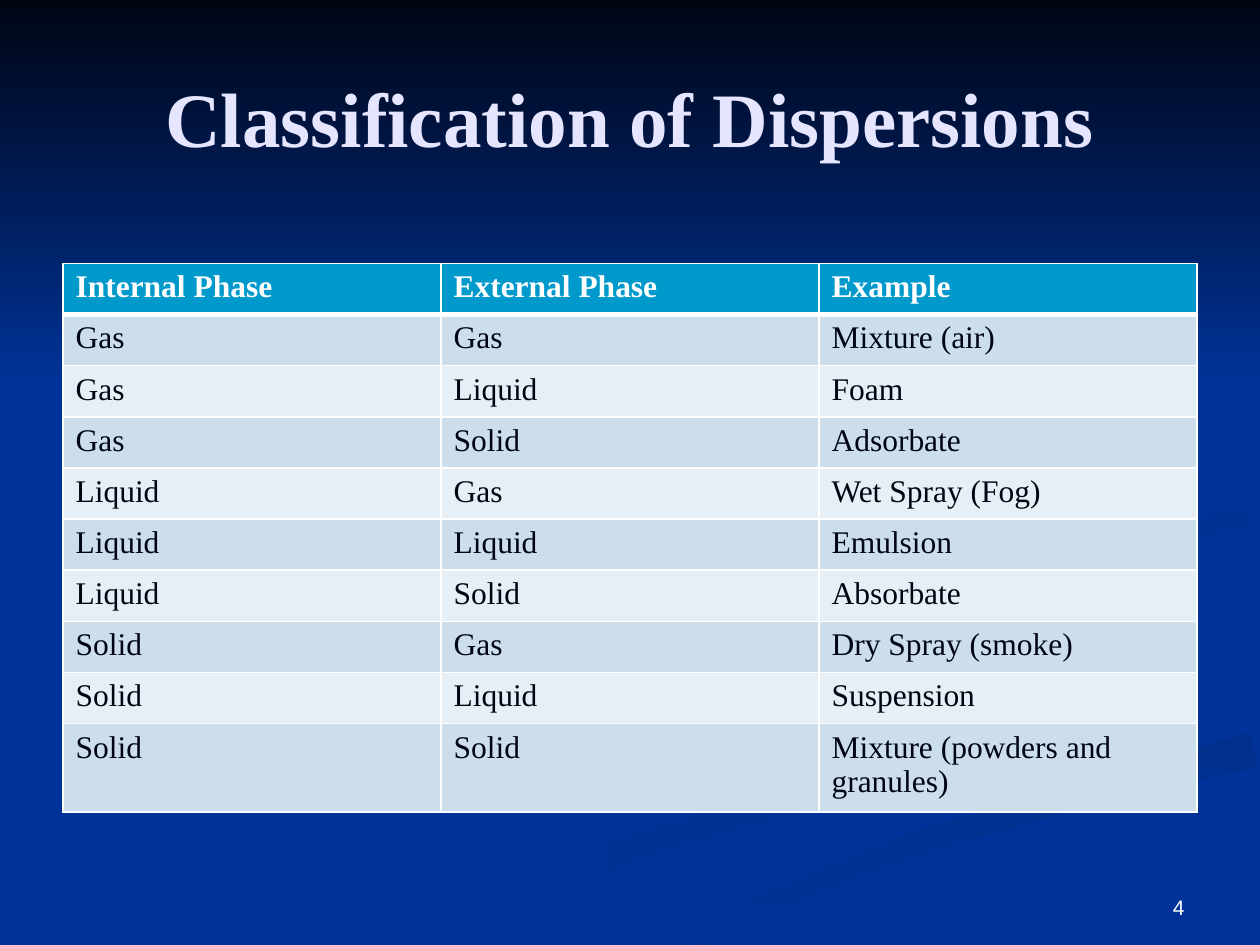
from itertools import product
from math import hypot

from pptx import Presentation
from pptx.dml.color import RGBColor
from pptx.enum.text import MSO_ANCHOR as Anchor, PP_ALIGN as Align
from pptx.oxml import parse_xml
from pptx.oxml.ns import nsdecls
from pptx.util import Inches, Pt

WIDTH, HEIGHT = 10, 7.5
SERIF = "Times New Roman"
BLUE = "003399"
WHITE = "FFFFFF"
INK = "000514"
HEADER_FILL = "0099CC"
BAND_FILLS = ("CCDEEC", "E7EFF6")
HEADINGS = ("Internal Phase", "External Phase", "Example")
PHASES = ("Gas", "Liquid", "Solid")
EXAMPLES = (
    "Mixture (air)", "Foam", "Adsorbate",
    "Wet Spray (Fog)", "Emulsion", "Absorbate",
    "Dry Spray (smoke)", "Suspension", "Mixture (powders and granules)",
)

# Each ribbon: (x, y, thickness) along its middle, gradient stops, angle.
RIBBONS = {
    "left swoosh": (
        [(5.72, 4.6, 0.03), (6.2, 5.02, 0.06), (7.3, 5.35, 0.04), (7.93, 5.75, 0.14),
         (6.9, 6.2, 0.2), (5, 6.74, 0.25), (3.3, 7.49, 0.35)], (BLUE, "003193"), 0),
    "inner curl": (
        [(7.24, 4.64, 0.02), (7.6, 5.03, 0.08), (8.45, 5.31, 0.14), (9.3, 5.7, 0.24),
         (8.94, 6.05, 0.02)], (BLUE, "003193"), 45),
    "lower streak": (
        [(9.95, 5.95, 0.28), (8.3, 6.39, 0.2), (7, 6.79, 0.22), (6, 7.19, 0.23),
         (5.37, 7.49, 0.2)], ("002F8C", BLUE), 90),
    "main ribbon": (
        [(9.95, 3.95, 0.14), (8.4, 4.22, 0.14), (7.55, 4.6, 0.5), (8.5, 5.12, 0.25),
         (9.6, 5.6, 0.4), (8.7, 6.15, 0.1), (6.95, 6.62, 0.15), (4.9, 7.49, 0.2)],
        (BLUE, BLUE), 0),
    "right streak": (
        [(9.95, 4.11, 0.18), (8.65, 4.33, 0.18), (7.93, 4.62, 0.24), (8.26, 4.96, 0.02)],
        ("003091", BLUE), 45),
    "upper curl": (
        [(7.62, 2.33, 0.02), (8.6, 2.87, 0.1), (8.91, 3.4, 0.05), (8.4, 3.88, 0.13),
         (6.8, 4.22, 0.16), (5.85, 4.6, 0.15), (6.22, 5, 0.02)], ("002F8E", BLUE), 45),
}


def color(hex_value):
    """Return the colour for a hex string."""
    return RGBColor.from_string(hex_value)


def smooth(stations, steps=6):
    """Return points on a Catmull-Rom curve through all the stations."""
    padded = [stations[0], *stations, stations[-1]]
    curve = []
    for window in zip(padded, padded[1:], padded[2:], padded[3:]):
        for step in range(steps):
            t = step / steps
            curve.append(tuple(
                b + t * (c - a) / 2 + t**2 * (2*a - 5*b + 4*c - d) / 2
                + t**3 * (3*b - a - 3*c + d) / 2
                for a, b, c, d in zip(*window)))
    return curve + [stations[-1]]


def ribbon_outline(stations):
    """Return the two edges of a ribbon as one outline kept on the slide."""
    curve = smooth(stations)
    left, right = [], []
    for before, (x, y, thickness), after in zip(curve[:1] + curve, curve, curve[1:] + curve[-1:]):
        run, rise = after[0] - before[0], after[1] - before[1]
        half = thickness / 2 / hypot(run, rise)
        for edge, offset in ((left, half), (right, -half)):
            edge.append((min(max(x - rise * offset, 0), WIDTH),
                         min(max(y + run * offset, 0), HEIGHT)))
    return left + right[::-1]


def add_gradient_outline(slide, points, stops, angle):
    """Add a closed outline with a two-colour gradient, angle clockwise."""
    corners = [(Inches(x), Inches(y)) for x, y in points]
    builder = slide.shapes.build_freeform(*corners[0])
    builder.add_line_segments(corners[1:], close=True)
    shape = builder.convert_to_shape()
    shape.shadow.inherit = False
    shape.line.fill.background()
    shape.fill.gradient()
    shape.fill.gradient_angle = -angle % 360
    for stop, hex_value in zip(shape.fill.gradient_stops, stops):
        stop.color.rgb = color(hex_value)


def add_backdrop(slide):
    """Paint the blue background, its ribbons and the dark top shade."""
    slide.background.fill.solid()
    slide.background.fill.fore_color.rgb = color(BLUE)
    for stations, stops, angle in RIBBONS.values():
        add_gradient_outline(slide, ribbon_outline(stations), stops, angle)
    shade = [(0, 0), (0, 3.08), (WIDTH, 3.08), (WIDTH, 0)]
    add_gradient_outline(slide, shade, (INK, BLUE), 90)


def write_text(frame, text, hex_value, align=Align.LEFT, **formats):
    """Write one formatted paragraph into a text frame."""
    paragraph = frame.paragraphs[0]
    paragraph.alignment = align
    run = paragraph.add_run()
    run.text = text
    run.font.color.rgb = color(hex_value)
    for name, value in formats.items():
        setattr(run.font, name, value)


def add_text(slide, box, anchor, *content, **formats):
    """Add a wrapping text box."""
    frame = slide.shapes.add_textbox(*map(Inches, box)).text_frame
    frame.word_wrap = True
    frame.vertical_anchor = anchor
    write_text(frame, *content, **formats)


def set_borders(cell, top, bottom):
    """Give a cell white borders, with top and bottom widths in points."""
    properties = cell._tc.get_or_add_tcPr()
    for side, width in {"L": 1, "R": 1, "T": top, "B": bottom}.items():
        properties.append(parse_xml(
            f'<a:ln{side} {nsdecls("a")} w="{Pt(width)}"><a:solidFill>'
            f'<a:srgbClr val="{WHITE}"/></a:solidFill></a:ln{side}>'))


def add_dispersion_table(slide):
    """Add the table of every internal and external phase pair."""
    pairs = product(PHASES, repeat=2)
    rows = [HEADINGS] + [(*pair, example) for pair, example in zip(pairs, EXAMPLES)]
    box = map(Inches, (0.5, 2.09, 9, 4.06))
    table = slide.shapes.add_table(len(rows), len(HEADINGS), *box).table
    for row, texts in enumerate(rows):
        header = row == 0
        fill = HEADER_FILL if header else BAND_FILLS[(row - 1) % 2]
        for column, text in enumerate(texts):
            cell = table.cell(row, column)
            set_borders(cell, 3 if row == 1 else 1, 3 if header else 1)
            cell.fill.solid()
            cell.fill.fore_color.rgb = color(fill)
            write_text(cell.text_frame, text, WHITE if header else INK,
                       name=SERIF, size=Pt(18), bold=header)


def main():
    """Build and save the slide."""
    presentation = Presentation()
    presentation.slide_width, presentation.slide_height = Inches(WIDTH), Inches(HEIGHT)
    slide = presentation.slides.add_slide(presentation.slide_layouts[6])
    add_backdrop(slide)
    add_text(slide, (0.5, 0.3, 9, 1.25), Anchor.MIDDLE, "Classification of Dispersions",
             "E5E5FF", Align.CENTER, name=SERIF, size=Pt(44), bold=True)
    add_dispersion_table(slide)
    add_text(slide, (7.17, 6.83, 2.33, 0.52), Anchor.BOTTOM, "4",
             WHITE, Align.RIGHT, name="Arial", size=Pt(12))
    presentation.save("out.pptx")


if __name__ == "__main__":
    main()
